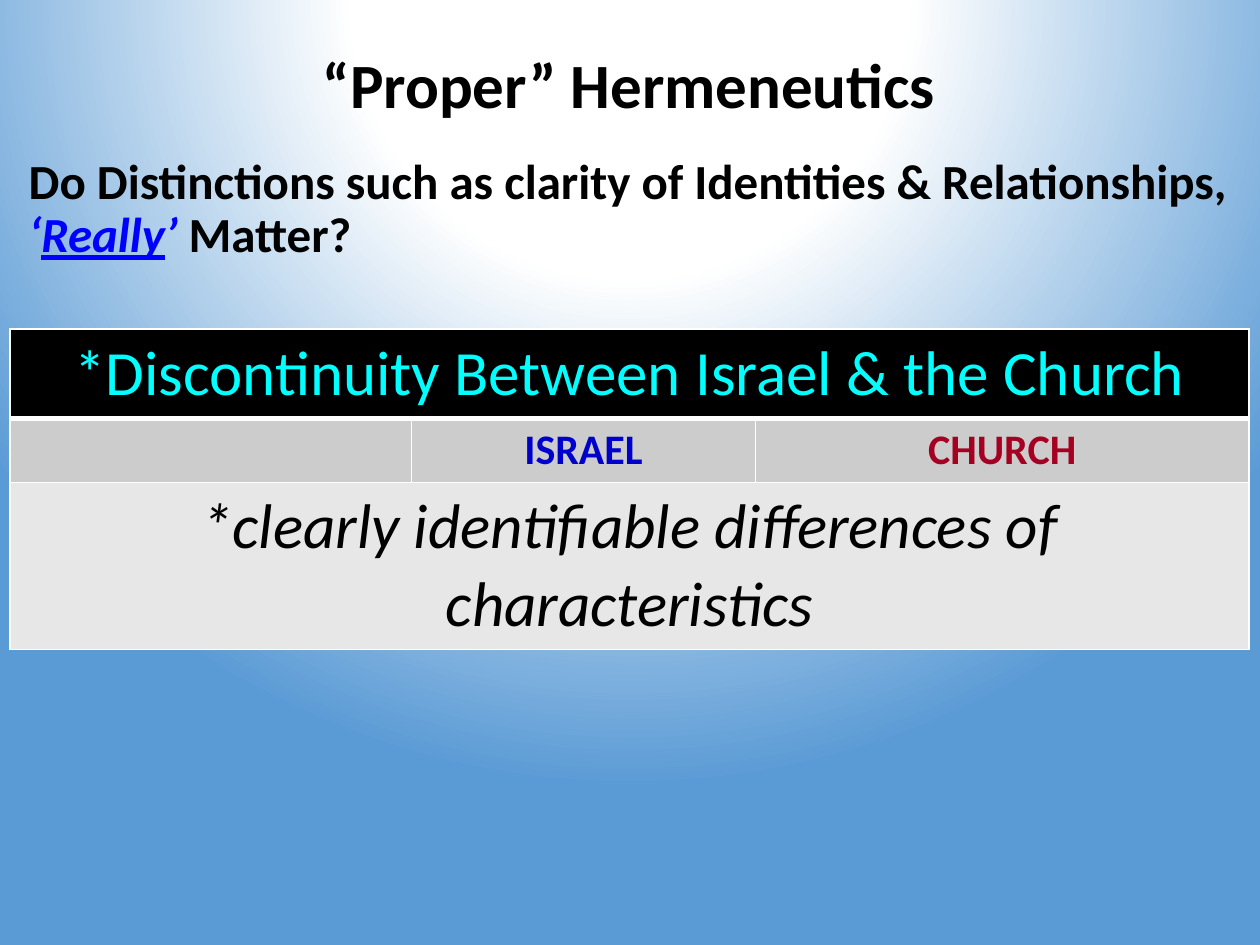
"""Build a slide on distinctions between Israel and the Church."""
import dataclasses

import lxml.etree
import pptx
import pptx.dml.color
import pptx.enum.text
import pptx.oxml
import pptx.oxml.ns
import pptx.util

Cm = pptx.util.Cm
Pt = pptx.util.Pt
qn = pptx.oxml.ns.qn
NAMESPACE = pptx.oxml.ns.nsdecls("a")


@dataclasses.dataclass(frozen=True)
class Theme:
    """Hold the colours, typeface and type sizes of the slide."""
    font: str = "Calibri"
    white: str = "FFFFFF"
    black: str = "000000"
    sky: str = "5B9BD5"
    link: str = "0000FF"
    cyan: str = "00FFFF"
    israel: str = "0000CC"
    church: str = "A50021"
    label_fill: str = "CCCCCC"
    note_fill: str = "E7E7E7"
    heading: int = 36
    question: int = 28
    label: int = 24


THEME = Theme()


def rgb(value):
    """Return a colour object for a hex value."""
    return pptx.dml.color.RGBColor.from_string(value)


def style_font(font, size, color, bold=False, italic=False):
    """Apply the theme typeface with the given look."""
    font.name = THEME.font
    font.size = Pt(size)
    font.color.rgb = rgb(color)
    font.bold = bold
    font.italic = italic


def paint_background(page):
    """Fill the page with a round glow centred above its top edge."""
    stops = ((0, THEME.white), (35, THEME.white), (100, THEME.sky))
    stop_xml = "".join(
        f'<a:gs pos="{position * 1000}"><a:srgbClr val="{color}"/></a:gs>'
        for position, color in stops)
    gradient = pptx.oxml.parse_xml(
        f'<a:gradFill {NAMESPACE} rotWithShape="1"><a:gsLst>{stop_xml}</a:gsLst>'
        '<a:path path="circle"><a:fillToRect l="50000" t="-80000" r="50000" b="180000"/>'
        '</a:path></a:gradFill>')
    page.background.fill.solid()
    solid = page.element.find(".//" + qn("p:bgPr") + "/" + qn("a:solidFill"))
    solid.getparent().replace(solid, gradient)


def add_text_frame(page, left, top, width, height):
    """Add a wrapping text box and return its frame and first paragraph."""
    frame = page.shapes.add_textbox(left, top, width, height).text_frame
    frame.word_wrap = True
    para = frame.paragraphs[0]
    para.line_spacing = 0.9
    return frame, para


def add_title(page, left, top, width, height):
    """Place the centred slide title."""
    frame, para = add_text_frame(page, left, top, width, height)
    frame.vertical_anchor = pptx.enum.text.MSO_ANCHOR.MIDDLE
    para.alignment = pptx.enum.text.PP_ALIGN.CENTER
    para.text = "“Proper” Hermeneutics"
    style_font(para.font, THEME.heading, THEME.black, bold=True)


def add_question(page, left, top, width, height):
    """Place the question with its emphasised word."""
    para = add_text_frame(page, left, top, width, height)[1]
    para.space_before = Pt(7.5)
    spans = (
        ("Do Distinctions such as clarity of Identities & Relationships, ", False, False),
        ("‘", True, False),
        ("Really", True, True),
        ("’ ", True, False),
        ("Matter?", False, False),
    )
    for text, stressed, underlined in spans:
        span = para.add_run()
        span.text = text
        color = THEME.link if stressed else THEME.black
        style_font(span.font, THEME.question, color, bold=True, italic=stressed)
        span.font.underline = underlined


def set_borders(cell, bottom=1):
    """Draw white borders round a cell, with a chosen bottom weight."""
    properties = cell._tc.get_or_add_tcPr()
    weights = {"lnL": 1, "lnR": 1, "lnT": 1, "lnB": bottom}
    for index, (side, weight) in enumerate(weights.items()):
        properties.insert(index, pptx.oxml.parse_xml(
            f'<a:{side} {NAMESPACE} w="{Pt(weight)}"><a:solidFill>'
            f'<a:srgbClr val="{THEME.white}"/></a:solidFill></a:{side}>'))


def write_cell(cell, text, size, color, bold=False, italic=False):
    """Write centred text in a cell with proportional space before it."""
    cell.vertical_anchor = pptx.enum.text.MSO_ANCHOR.MIDDLE
    para = cell.text_frame.paragraphs[0]
    para.text = text
    para.alignment = pptx.enum.text.PP_ALIGN.CENTER
    para.space_before = Pt(0)
    spacing = para._p.pPr.find(qn("a:spcBef"))
    spacing.remove(spacing[0])
    lxml.etree.SubElement(spacing, qn("a:spcPct"), val="20000")
    style_font(para.font, size, color, bold, italic)


def add_comparison(page, left, top, width, height):
    """Place the table, sharing the box among its columns and rows."""
    column_shares = (3.19, 2.73, 3.92)
    row_shares = (0.7, 0.5, 0.6)
    table = page.shapes.add_table(3, 3, left, top, width, height).table
    table.first_row = False
    table.horz_banding = False
    for column, share in zip(table.columns, column_shares):
        column.width = int(width * share / sum(column_shares))
    for row, share in zip(table.rows, row_shares):
        row.height = int(height * share / sum(row_shares))
    fills = (THEME.black, THEME.label_fill, THEME.note_fill)
    for index, fill in enumerate(fills):
        for cell in table.rows[index].cells:
            cell.fill.solid()
            cell.fill.fore_color.rgb = rgb(fill)
            set_borders(cell, bottom=3 if index == 0 else 1)
    for index in (0, 2):
        table.cell(index, 0).merge(table.cell(index, 2))
    write_cell(table.cell(0, 0), "*Discontinuity Between Israel & the Church",
               THEME.heading, THEME.cyan)
    write_cell(table.cell(1, 1), "ISRAEL", THEME.label, THEME.israel, bold=True)
    write_cell(table.cell(1, 2), "CHURCH", THEME.label, THEME.church, bold=True)
    write_cell(table.cell(2, 0), "*clearly identifiable differences of characteristics",
               THEME.heading, THEME.black, italic=True)


def main():
    """Assemble and save the deck."""
    deck = pptx.Presentation()
    deck.slide_width = Cm(25.4)
    deck.slide_height = Cm(19.05)
    page = deck.slides.add_slide(deck.slide_layouts[6])
    paint_background(page)
    add_comparison(page, Cm(0.2), Cm(6.63), Cm(24.98), Cm(4.57))
    add_title(page, Cm(6.12), Cm(0.53), Cm(13.13), Cm(2.51))
    add_question(page, Cm(0.33), Cm(3.05), Cm(24.74), Cm(2.51))
    deck.save("out.pptx")


if __name__ == "__main__":
    main()
